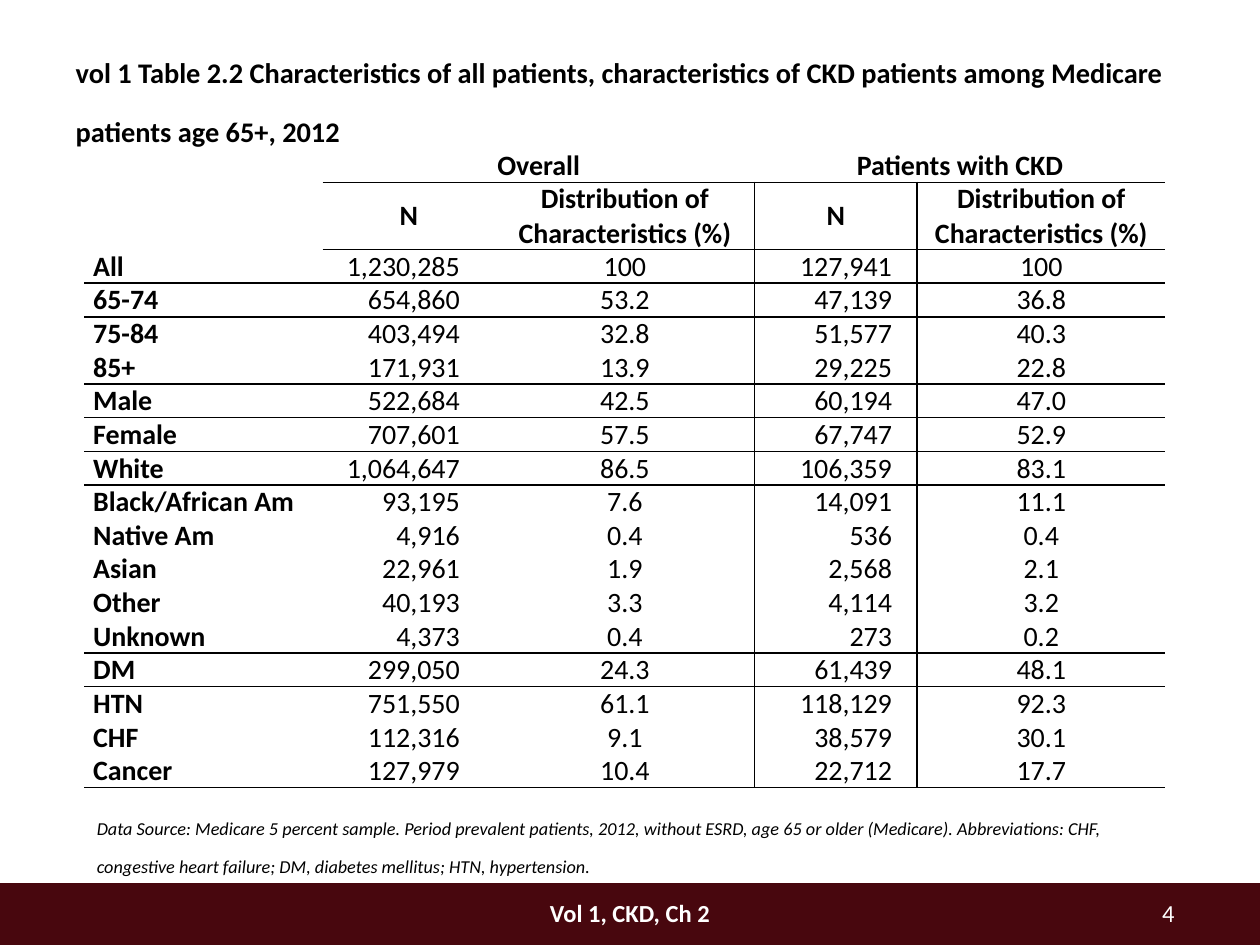
from dataclasses import dataclass

from lxml.etree import SubElement
from pptx import Presentation
from pptx.dml.color import RGBColor
from pptx.enum.shapes import MSO_SHAPE
from pptx.enum.text import MSO_ANCHOR as ANCHOR, MSO_AUTO_SIZE as FIT, PP_ALIGN as ALIGN
from pptx.oxml.ns import qn
from pptx.util import Inches, Pt


@dataclass(frozen=True)
class Theme:
    font: str = "Calibri"
    ink: str = "000000"
    paper: str = "FFFFFF"
    band: str = "48070E"
    title: int = 28
    source: int = 18
    table: int = 16
    footer: int = 14
    rule: int = 1


THEME = Theme()
PLAIN_STYLE = "{2D5ABB26-0587-4C30-8999-92F81FD0307C}"

TITLE = ("vol 1 Table 2.2 Characteristics of all patients, characteristics of CKD "
         "patients among Medicare patients age 65+, 2012")
SOURCE = ("Data Source: Medicare 5 percent sample. Period prevalent patients, 2012, "
          "without ESRD, age 65 or older (Medicare). Abbreviations: CHF, congestive "
          "heart failure; DM, diabetes mellitus; HTN, hypertension.")

SHARE = "Distribution of Characteristics (%)"
HEADER = [["", "Overall", "", "Patients with CKD", ""],
          ["", "N", SHARE, "N", SHARE]]
# Each group of rows ends with a rule
GROUPS = [
    [["All", "1,230,285", "100", "127,941", "100"]],
    [["65-74", "654,860", "53.2", "47,139", "36.8"],
     ["75-84", "403,494", "32.8", "51,577", "40.3"],
     ["85+", "171,931", "13.9", "29,225", "22.8"]],
    [["Male", "522,684", "42.5", "60,194", "47.0"],
     ["Female", "707,601", "57.5", "67,747", "52.9"]],
    [["White", "1,064,647", "86.5", "106,359", "83.1"],
     ["Black/African Am", "93,195", "7.6", "14,091", "11.1"],
     ["Native Am", "4,916", "0.4", "536", "0.4"],
     ["Asian", "22,961", "1.9", "2,568", "2.1"],
     ["Other", "40,193", "3.3", "4,114", "3.2"],
     ["Unknown", "4,373", "0.4", "273", "0.2"]],
    [["DM", "299,050", "24.3", "61,439", "48.1"],
     ["HTN", "751,550", "61.1", "118,129", "92.3"],
     ["CHF", "112,316", "9.1", "38,579", "30.1"],
     ["Cancer", "127,979", "10.4", "22,712", "17.7"]],
]
COL_WIDTHS = [1.89, 1.37, 2.06, 1.29, 1.97]
COUNT_INSETS = {1: 0.28, 3: 0.2}  # right inset of the count columns
SPLIT = 3  # first column of the CKD half


def write(tf, text, size, color=THEME.ink, bold=False, italic=False,
          align=ALIGN.LEFT, raised=False):
    p = tf.paragraphs[0]
    p.alignment = align
    if not text:  # keeps an empty cell as low as its row
        SubElement(p._p, qn("a:endParaRPr")).set("sz", str(size * 100))
        return
    r = p.add_run()
    r.text = text
    font = r.font
    font.name, font.size = THEME.font, Pt(size)
    font.bold, font.italic = bold, italic
    font.color.rgb = RGBColor.from_string(color)
    if raised:
        r._r.get_or_add_rPr().set("baseline", "30000")


def add_text(slide, box, text, size, **fmt):
    tf = slide.shapes.add_textbox(*map(Inches, box)).text_frame
    tf.word_wrap = True
    write(tf, text, size, **fmt)
    return tf


def add_title(slide, box):
    sp = slide.shapes.title
    sp.left, sp.top, sp.width, sp.height = map(Inches, box)
    tf = sp.text_frame
    tf.vertical_anchor = ANCHOR.TOP
    tf.auto_size = FIT.SHAPE_TO_FIT_TEXT
    write(tf, TITLE, THEME.title, bold=True, raised=True)


def add_source(slide, box):
    tf = add_text(slide, box, SOURCE, THEME.source, italic=True, raised=True)
    tf.auto_size = FIT.SHAPE_TO_FIT_TEXT


def add_footer(slide, box):
    left, top, width, height = box
    band = slide.shapes.add_shape(MSO_SHAPE.RECTANGLE, *map(Inches, box))
    band.shadow.inherit = False
    band.fill.solid()
    band.fill.fore_color.rgb = RGBColor.from_string(THEME.band)
    band.line.fill.background()
    text_top = top + 0.07
    add_text(slide, (left + (width - 2.17) / 2, text_top, 2.17, 0.33), "Vol 1, CKD, Ch 2",
             THEME.footer, color=THEME.paper, bold=True, align=ALIGN.CENTER)
    add_text(slide, (left + width - 1.58, text_top, 1, 0.3), "4",
             THEME.footer, color=THEME.paper, align=ALIGN.RIGHT)


def set_borders(cell, sides):
    tc_pr = cell._tc.get_or_add_tcPr()
    for side in "LRTB":  # order required by the schema
        if side in sides:
            ln = SubElement(tc_pr, qn(f"a:ln{side}"), w=str(Pt(THEME.rule)))
            fill = SubElement(ln, qn("a:solidFill"))
            SubElement(fill, qn("a:srgbClr"), val=THEME.ink)


def cell_sides(row, col, ruled):
    sides = ""
    if row >= 1 and col in (SPLIT - 1, SPLIT):
        sides += "L" if col == SPLIT else "R"
    # Header rules leave the label column open
    for side, above in (("T", row - 1), ("B", row)):
        if above in ruled and (col > 0 or above >= len(HEADER)):
            sides += side
    return sides


def add_patient_table(slide, box):
    left, top, width, height = box
    rows = HEADER + [row for group in GROUPS for row in group]
    ruled = {0, 1}
    last = len(HEADER) - 1
    for group in GROUPS:
        last += len(group)
        ruled.add(last)

    table = slide.shapes.add_table(len(rows), len(COL_WIDTHS), *map(Inches, box)).table
    table.first_row = table.horz_banding = False
    table._tbl.tblPr.find(qn("a:tableStyleId")).text = PLAIN_STYLE
    for column, col_width in zip(table.columns, COL_WIDTHS):
        column.width = Inches(col_width)

    # The second header row is two lines high
    line = height / (len(rows) + 1)
    for i, values in enumerate(rows):
        table.rows[i].height = Inches(line * (2 if i == 1 else 1))
        is_header = i < len(HEADER)
        for j, value in enumerate(values):
            cell = table.cell(i, j)
            is_count = j in COUNT_INSETS and not is_header
            cell.margin_top = cell.margin_bottom = 0
            cell.margin_left = Inches(0.07)
            cell.margin_right = Inches(COUNT_INSETS[j] if is_count else 0.07)
            cell.vertical_anchor = ANCHOR.MIDDLE
            set_borders(cell, cell_sides(i, j, ruled))
            cell.fill.background()
            align = ALIGN.LEFT if j == 0 else ALIGN.RIGHT if is_count else ALIGN.CENTER
            write(cell.text_frame, value, THEME.table, bold=is_header or j == 0, align=align)
    for j in (1, SPLIT):
        table.cell(0, j).merge(table.cell(0, j + 1))


def main():
    prs = Presentation()
    prs.slide_width, prs.slide_height = Inches(10), Inches(7.5)
    slide = prs.slides.add_slide(prs.slide_layouts[5])  # title only
    add_title(slide, (0.5, 0.34, 9, 0.73))
    add_footer(slide, (0, 7.01, 10, 0.5))
    add_source(slide, (0.67, 6.41, 8.67, 0.5))
    add_patient_table(slide, (0.67, 1.18, sum(COL_WIDTHS), 5.07))
    prs.save("out.pptx")


if __name__ == "__main__":
    main()
